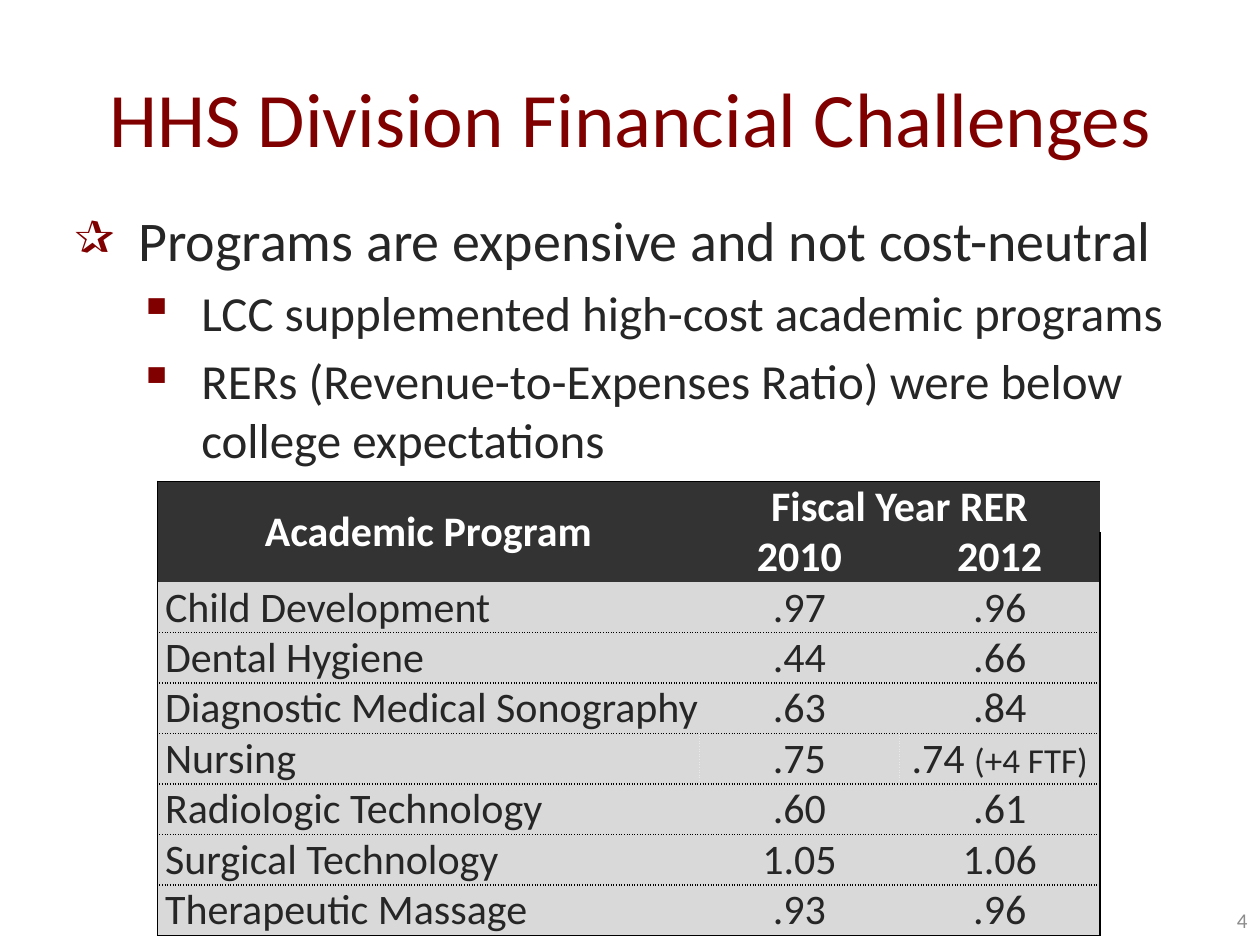
from lxml import etree
from pptx import Presentation
from pptx.dml.color import RGBColor
from pptx.enum.text import MSO_ANCHOR, PP_ALIGN
from pptx.oxml.ns import qn
from pptx.util import Inches, Pt

CENTER, LEFT, RIGHT = PP_ALIGN.CENTER, PP_ALIGN.LEFT, PP_ALIGN.RIGHT
MIDDLE, BOTTOM = MSO_ANCHOR.MIDDLE, MSO_ANCHOR.BOTTOM

MAROON = RGBColor(0x80, 0x00, 0x00)
INK = RGBColor(0x26, 0x26, 0x26)
GRAY = RGBColor(0x8C, 0x8C, 0x8C)
HEADER_FILL = RGBColor(0x33, 0x33, 0x33)
BODY_FILL = RGBColor(0xD9, 0xD9, 0xD9)
WHITE = RGBColor(0xFF, 0xFF, 0xFF)
BLACK = RGBColor(0x00, 0x00, 0x00)
PALE = RGBColor(0xEA, 0xEA, 0xEA)


def add_run(paragraph, text, size, color, bold=False):
    run = paragraph.add_run()
    run.text = text
    run.font.name = "Calibri"
    run.font.size = Pt(size)
    run.font.color.rgb = color
    run.font.bold = bold


def add_border(cell, side, style):
    line = etree.SubElement(cell._tc.get_or_add_tcPr(), qn(f"a:ln{side}"))
    if style is None:
        etree.SubElement(line, qn("a:noFill"))
        return
    color, width, dash = style
    line.set("w", str(Pt(width)))
    fill = etree.SubElement(line, qn("a:solidFill"))
    etree.SubElement(fill, qn("a:srgbClr"), val=str(color))
    etree.SubElement(line, qn("a:prstDash"), val=dash)


prs = Presentation()
prs.slide_width, prs.slide_height = Inches(10), Inches(7.5)
slide = prs.slides.add_slide(prs.slide_layouts[5])

title = slide.shapes.title
title.left, title.top = Inches(0.17), Inches(0.3)
title.width, title.height = Inches(9.67), Inches(1.25)
title.text_frame.vertical_anchor = MIDDLE
heading = title.text_frame.paragraphs[0]
heading.alignment = CENTER
add_run(heading, "HHS Division Financial Challenges", 44, MAROON)

challenges = slide.shapes.add_textbox(Inches(0.5), Inches(1.58), Inches(9.5), Inches(5.75)).text_frame
challenges.word_wrap = True
points = [
    (0, "✰", 32, "Programs are expensive and not cost-neutral"),
    (1, "▪", 28, "LCC supplemented high-cost academic programs"),
    (1, "▪", 28, "RERs (Revenue-to-Expenses Ratio) were below college expectations"),
]
for i, (level, bullet, size, text) in enumerate(points):
    point = challenges.add_paragraph() if i else challenges.paragraphs[0]
    point.level = level
    if i:
        point.space_before = Pt(0.2 * size)
    props = point._p.get_or_add_pPr()
    props.set("marL", str(Inches(0.5 + 0.5 * level)))
    props.set("indent", str(Inches(-0.5)))
    bullet_color = etree.SubElement(props, qn("a:buClr"))
    etree.SubElement(bullet_color, qn("a:srgbClr"), val=str(MAROON))
    etree.SubElement(props, qn("a:buChar"), char=bullet)
    add_run(point, text, size, INK)

page = slide.shapes.add_textbox(Inches(9.17), Inches(7.1), Inches(0.83), Inches(0.4)).text_frame
page.word_wrap = True
page.vertical_anchor = MIDDLE
page.paragraphs[0].alignment = RIGHT
add_run(page.paragraphs[0], "4", 12, GRAY)

ratios = [
    ("Academic Program", "Fiscal Year RER", ""),
    ("", "2010", "2012"),
    ("Child Development", ".97", ".96"),
    ("Dental Hygiene", ".44", ".66"),
    ("Diagnostic Medical Sonography", ".63", ".84"),
    ("Nursing", ".75", ".74 "),
    ("Radiologic Technology", ".60", ".61"),
    ("Surgical Technology", "1.05", "1.06"),
    ("Therapeutic Massage", ".93", ".96"),
]
HEADER_ROWS, NURSING_ROW = 2, 5
last_row, last_col = len(ratios) - 1, 2
table = slide.shapes.add_table(len(ratios), 3, Inches(1.25), Inches(3.82), Inches(7.48), Inches(3.6)).table
for column, width in zip(table.columns, (4.3, 1.59, 1.59)):
    column.width = Inches(width)
for row in table.rows:
    row.height = Inches(0.4)

outline = (BLACK, 1, "solid")
row_rule = (BLACK, 1, "sysDot")
for r, texts in enumerate(ratios):
    is_header = r < HEADER_ROWS
    inner_rule = (PALE, 0.5, "dot") if r == NURSING_ROW else None
    top = outline if r == 0 else row_rule if r > HEADER_ROWS else None
    bottom = outline if r == last_row else None if is_header else row_rule
    for c, text in enumerate(texts):
        cell = table.cell(r, c)
        add_border(cell, "L", outline if c == 0 else inner_rule)
        add_border(cell, "R", outline if c == last_col else inner_rule)
        add_border(cell, "T", top)
        add_border(cell, "B", bottom)
        cell.fill.solid()
        cell.fill.fore_color.rgb = HEADER_FILL if is_header else BODY_FILL
        cell.margin_left = cell.margin_right = cell.margin_top = cell.margin_bottom = 0
        cell.vertical_anchor = MIDDLE if r == 0 else BOTTOM
        entry = cell.text_frame.paragraphs[0]
        entry.alignment = CENTER if is_header or c else LEFT
        if not is_header and c == 0:
            entry._p.get_or_add_pPr().set("marL", str(Inches(0.06)))
        if text:
            add_run(entry, text, 24, WHITE if is_header else INK, is_header)
add_run(table.cell(NURSING_ROW, last_col).text_frame.paragraphs[0], "(+4 FTF)", 20, INK)
table.cell(0, 0).merge(table.cell(1, 0))
table.cell(0, 1).merge(table.cell(0, 2))

prs.save("out.pptx")
